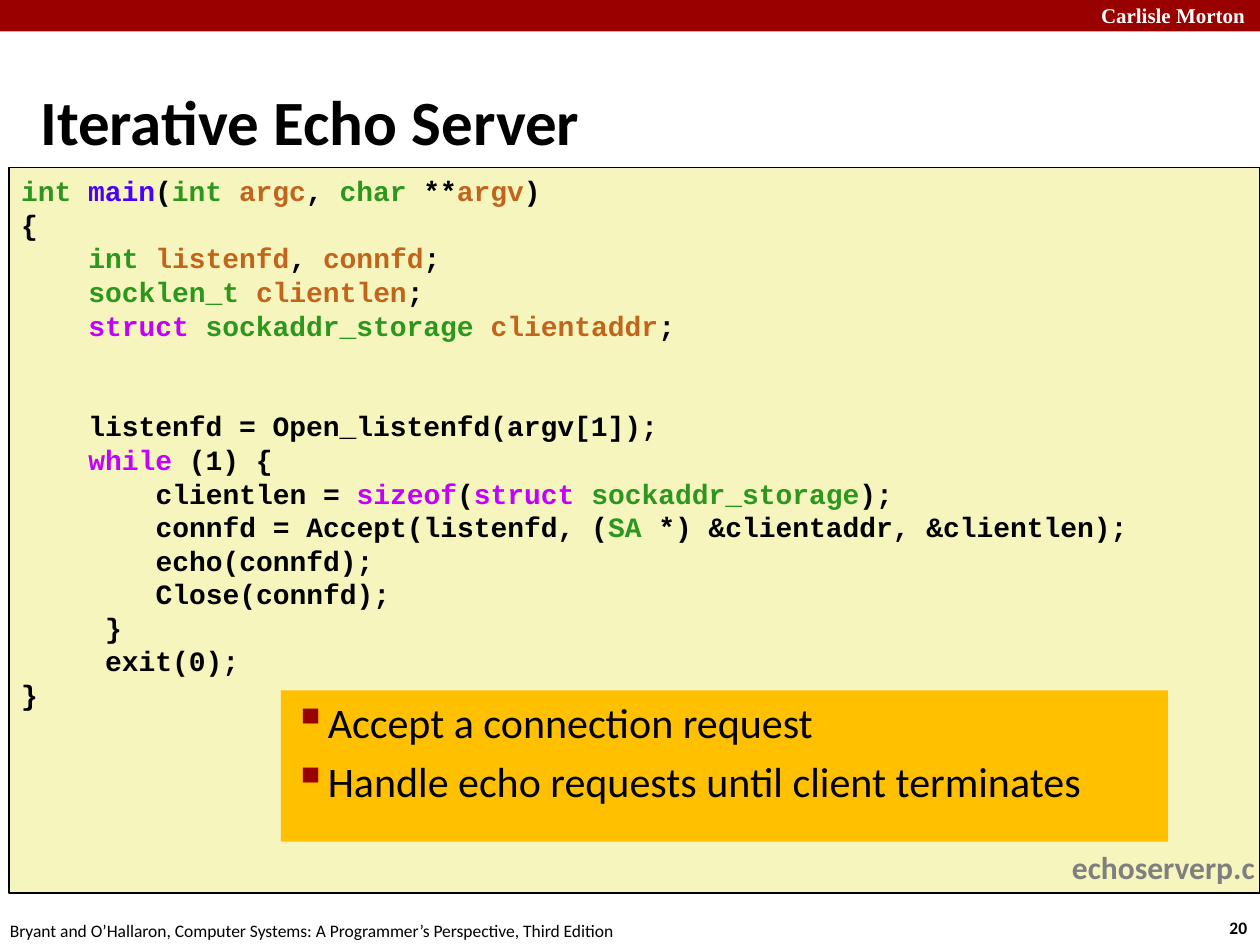
from lxml import etree
from pptx import Presentation
from pptx import util as u
from pptx.dml.color import RGBColor
from pptx.enum import shapes, text
from pptx.oxml.ns import qn

INK, TYPE, NAME, KEY, FUNC = "000000", "2D961E", "C1651C", "C200FF", "4A00FF"
RED = "990000"
CHAR_WIDTH = 0.6 * 16 / 72
LINE = 19.2

# (leading columns, blank lines above, coloured pieces)
CODE = [
    (0, 0, [("int ", TYPE), ("main", FUNC), ("(", INK), ("int ", TYPE), ("argc", NAME),
            (", ", INK), ("char", TYPE), (" **", INK), ("argv", NAME), (")", INK)]),
    (0, 0, [("{", INK)]),
    (4, 0, [("int ", TYPE), ("listenfd", NAME), (", ", INK), ("connfd", NAME), (";", INK)]),
    (4, 0, [("socklen_t ", TYPE), ("clientlen", NAME), (";", INK)]),
    (4, 0, [("struct ", KEY), ("sockaddr_storage ", TYPE), ("clientaddr", NAME), (";", INK)]),
    (4, 2, [("listenfd = Open_listenfd(argv[1]);", INK)]),
    (4, 0, [("while", KEY), (" (1) {", INK)]),
    (8, 0, [("clientlen = ", INK), ("sizeof", KEY), ("(", INK), ("struct ", KEY),
            ("sockaddr_storage", TYPE), (");", INK)]),
    (8, 0, [("connfd = Accept(listenfd, (", INK), ("SA", TYPE),
            (" *) &clientaddr, &clientlen);", INK)]),
    (8, 0, [("echo(connfd);", INK)]),
    (8, 0, [("Close(connfd);", INK)]),
    (5, 0, [("}", INK)]),
    (5, 0, [("exit(0);", INK)]),
    (0, 0, [("}", INK)]),
]


def rgb(value):
    return RGBColor.from_string(value)


def inches(box):
    return [u.Inches(v) for v in box]


def add_run(p, words, color=INK, **fmt):
    r = p.add_run()
    r.text = words
    r.font.color.rgb = rgb(color)
    for key, value in {"name": "Calibri", **fmt}.items():
        setattr(r.font, key, value)


def add_rect(s, box, fill, line=None):
    sp = s.shapes.add_shape(shapes.MSO_SHAPE.RECTANGLE, *inches(box))
    sp.shadow.inherit = False
    sp.fill.solid()
    sp.fill.fore_color.rgb = rgb(fill)
    if line:
        sp.line.color.rgb = rgb(line)
        sp.line.width = u.Pt(1)
    else:
        sp.line.fill.background()
    tf = sp.text_frame
    tf.vertical_anchor = text.MSO_ANCHOR.TOP
    return tf


def add_label(s, box, words, **fmt):
    tf = s.shapes.add_textbox(*inches(box)).text_frame
    tf.word_wrap = False
    add_run(tf.paragraphs[0], words, **fmt)


def paragraphs(tf, items):
    for i, item in enumerate(items):
        p = tf.add_paragraph() if i else tf.paragraphs[0]
        p.alignment = text.PP_ALIGN.LEFT
        yield p, item


def set_indent(p, left, first=0):
    pPr = p._p.get_or_add_pPr()
    pPr.set("marL", str(u.Inches(left)))
    pPr.set("indent", str(u.Inches(first)))
    return pPr


def add_header(s, box):
    add_rect(s, box, RED)
    add_label(s, (box[0] + box[2] - 1.36, -0.03, 1.43, 0.3), "Carlisle Morton",
              color="FFFFFF", name="Times New Roman", size=u.Pt(12), bold=True)


def add_title(s, box):
    sp = s.shapes.title
    sp.left, sp.top, sp.width, sp.height = inches(box)
    tf = sp.text_frame
    tf.vertical_anchor = text.MSO_ANCHOR.MIDDLE
    p = tf.paragraphs[0]
    p.alignment = text.PP_ALIGN.LEFT
    add_run(p, "Iterative Echo Server", size=u.Pt(36), bold=True)


def add_code(s, box):
    tf = add_rect(s, box, "F6F5BD", INK)
    for p, (columns, blanks, pieces) in paragraphs(tf, CODE):
        p.line_spacing = u.Pt(LINE)
        p.space_before = u.Pt(blanks * LINE)
        set_indent(p, columns * CHAR_WIDTH)
        for words, color in pieces:
            add_run(p, words, color, name="Courier New", size=u.Pt(16), bold=True)
    left, top, width, height = box
    add_label(s, (left + width - 1.59, top + height - 0.41, 1.67, 0.4), "echoserverp.c",
              color="7F7F7F", size=u.Pt(18), bold=True)


def add_notes_box(s, box, items):
    tf = add_rect(s, box, "FFC000")
    for p, words in paragraphs(tf, items):
        p.space_before = u.Pt(4.8)
        pPr = set_indent(p, 0.18, -0.18)
        color = etree.SubElement(pPr, qn("a:buClr"))
        etree.SubElement(color, qn("a:srgbClr"), val=RED)
        etree.SubElement(pPr, qn("a:buSzPct"), val="110000")
        etree.SubElement(pPr, qn("a:buChar"), char="▪")
        add_run(p, words, size=u.Pt(24))


def add_footer(s, box):
    left, top, width, height = box
    add_label(s, (left - 0.02, top + 0.02, 5.08, height),
              "Bryant and O’Hallaron, Computer Systems: A Programmer’s Perspective, Third Edition",
              size=u.Pt(10))
    add_label(s, (left + width - 0.34, top, 0.37, height), "20", size=u.Pt(10), bold=True)


def main():
    prs = Presentation()
    prs.slide_width, prs.slide_height = u.Inches(10), u.Inches(7.5)
    s = prs.slides.add_slide(prs.slide_layouts[5])
    add_header(s, (0, 0, 10, 0.25))
    add_footer(s, (0, 7.23, 10, 0.27))
    add_title(s, (0.22, 0.64, 9.61, 0.63))
    add_code(s, (0.07, 1.33, 9.93, 5.76))
    add_notes_box(s, (2.23, 5.48, 7.04, 1.2),
                  ["Accept a connection request", "Handle echo requests until client terminates"])
    prs.save("out.pptx")


if __name__ == "__main__":
    main()
